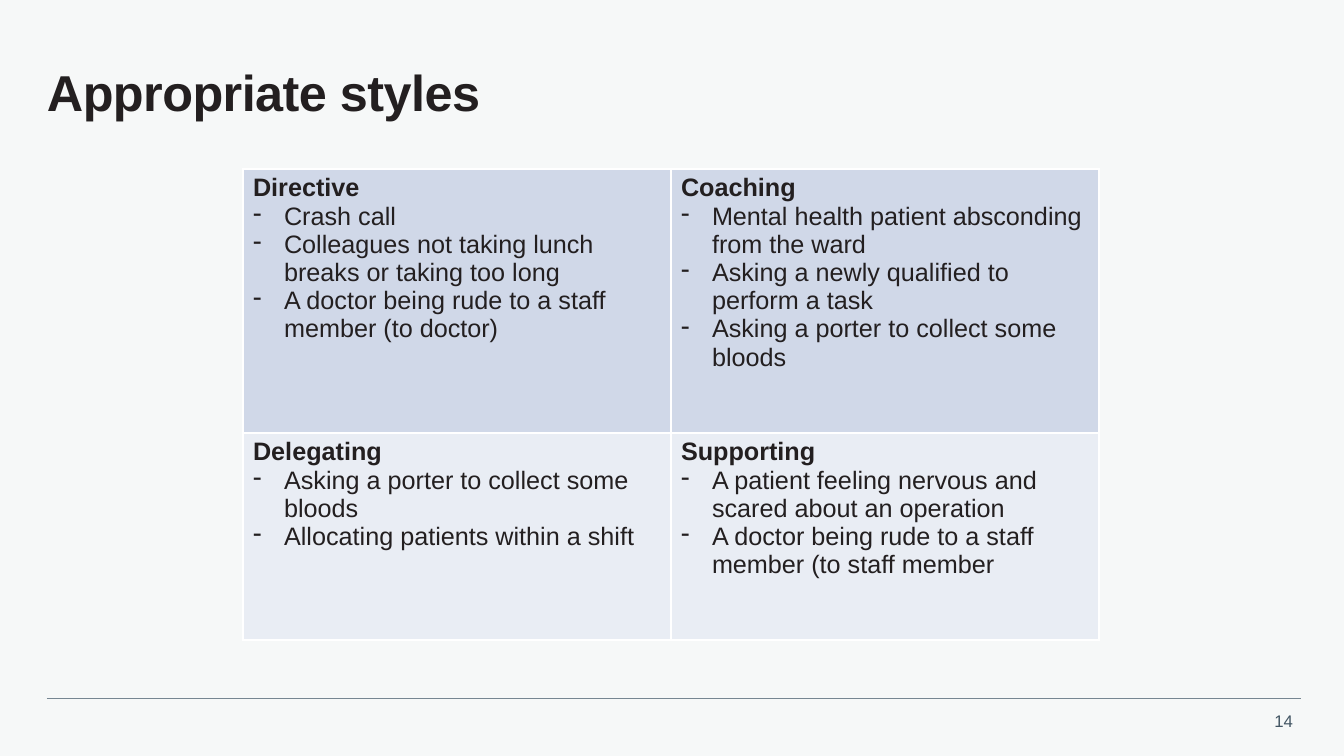
from lxml import etree
from pptx import Presentation
from pptx import util as u
from pptx.dml.color import RGBColor
from pptx.enum import shapes, text
from pptx.oxml import ns

EMU_PER_PX = 12192000 / 1344
FONT = "Arial"
PAGE_TINT = RGBColor(0xF6, 0xF8, 0xF8)
INK = RGBColor(0x23, 0x1F, 0x20)
SLATE = RGBColor(0x42, 0x55, 0x63)
RULE = RGBColor(0x76, 0x86, 0x92)
ROW_FILLS = [RGBColor(0xD0, 0xD8, 0xE8), RGBColor(0xE9, 0xED, 0xF4)]
ROW_HEIGHTS = [264, 207]
COLUMN_WIDTH = 428
BULLET_INDENT = 31

STYLES = [
    [
        ("Directive", [
            "Crash call",
            "Colleagues not taking lunch breaks or taking too long",
            "A doctor being rude to a staff member (to doctor)",
        ]),
        ("Coaching", [
            "Mental health patient absconding from the ward",
            "Asking a newly qualified to perform a task",
            "Asking a porter to collect some bloods",
        ]),
    ],
    [
        ("Delegating", [
            "Asking a porter to collect some bloods",
            "Allocating patients within a shift",
        ]),
        ("Supporting", [
            "A patient feeling nervous and scared about an operation",
            "A doctor being rude to a staff member (to staff member",
        ]),
    ],
]


def px(length):
    """Turn pixels into EMU."""
    return u.Emu(round(length * EMU_PER_PX))


def format_runs(para, size, color, bold=False):
    """Give every run of a paragraph its font."""
    for span in para.runs:
        span.font.name = FONT
        span.font.size = u.Pt(size)
        span.font.bold = bold
        span.font.color.rgb = color


def add_title(page, wording):
    """Add the slide heading."""
    box = page.shapes.add_textbox(px(47), px(47), px(1257), px(96))
    frame = box.text_frame
    frame.word_wrap = True
    frame.vertical_anchor = text.MSO_ANCHOR.MIDDLE
    frame.margin_left = frame.margin_right = 0
    frame.margin_top = frame.margin_bottom = 0
    frame.text = wording
    para = frame.paragraphs[0]
    para.line_spacing = 0.9
    format_runs(para, 36, INK, bold=True)
    para.runs[0].font._element.set("spc", "-40")


def add_footer(page, number):
    """Add the footer rule and the page number."""
    rule = page.shapes.add_connector(
        shapes.MSO_CONNECTOR.STRAIGHT, px(47), px(698), px(1301), px(698))
    rule.line.color.rgb = RULE
    rule.line.width = u.Pt(0.5)
    etree.SubElement(rule._element.spPr, ns.qn("a:effectLst"))
    box = page.shapes.add_textbox(px(1262), px(706), px(41), px(30))
    frame = box.text_frame
    frame.word_wrap = False
    frame.auto_size = text.MSO_AUTO_SIZE.SHAPE_TO_FIT_TEXT
    frame.text = number
    para = frame.paragraphs[0]
    para.alignment = text.PP_ALIGN.RIGHT
    format_runs(para, 12, SLATE)


def add_borders(cell):
    """Draw a thin white line on each side of a cell."""
    properties = cell._tc.get_or_add_tcPr()
    for side in ("lnL", "lnR", "lnT", "lnB"):
        line = etree.SubElement(properties, ns.qn(f"a:{side}"), w=str(u.Pt(1)))
        solid = etree.SubElement(line, ns.qn("a:solidFill"))
        etree.SubElement(solid, ns.qn("a:srgbClr"), val="FFFFFF")


def add_dash(para):
    """Give a paragraph a hanging dash bullet."""
    properties = para._p.get_or_add_pPr()
    properties.set("marL", str(px(BULLET_INDENT)))
    properties.set("indent", str(-px(BULLET_INDENT)))
    etree.SubElement(properties, ns.qn("a:buFontTx"))
    etree.SubElement(properties, ns.qn("a:buChar"), char="-")


def fill_cell(cell, heading, examples, color):
    """Write a style's heading and examples into a cell."""
    add_borders(cell)
    cell.fill.solid()
    cell.fill.fore_color.rgb = color
    frame = cell.text_frame
    frame.text = heading
    format_runs(frame.paragraphs[0], 18, INK, bold=True)
    for example in examples:
        para = frame.add_paragraph()
        add_dash(para)
        para.text = example
        format_runs(para, 18, INK)


def add_style_table(page):
    """Add the grid of leadership styles."""
    grid = page.shapes.add_table(
        2, 2, px(243), px(169), px(2 * COLUMN_WIDTH), px(sum(ROW_HEIGHTS))).table
    grid.first_row = False
    for column in grid.columns:
        column.width = px(COLUMN_WIDTH)
    for row, height, color, entries in zip(grid.rows, ROW_HEIGHTS, ROW_FILLS, STYLES):
        row.height = px(height)
        for cell, (heading, examples) in zip(row.cells, entries):
            fill_cell(cell, heading, examples, color)


def main():
    """Build and save the slide."""
    deck = Presentation()
    deck.slide_width, deck.slide_height = px(1344), px(756)
    page = deck.slides.add_slide(deck.slide_layouts[6])
    page.background.fill.solid()
    page.background.fill.fore_color.rgb = PAGE_TINT
    add_footer(page, "14")
    add_title(page, "Appropriate styles")
    add_style_table(page)
    deck.save("out.pptx")


if __name__ == "__main__":
    main()
